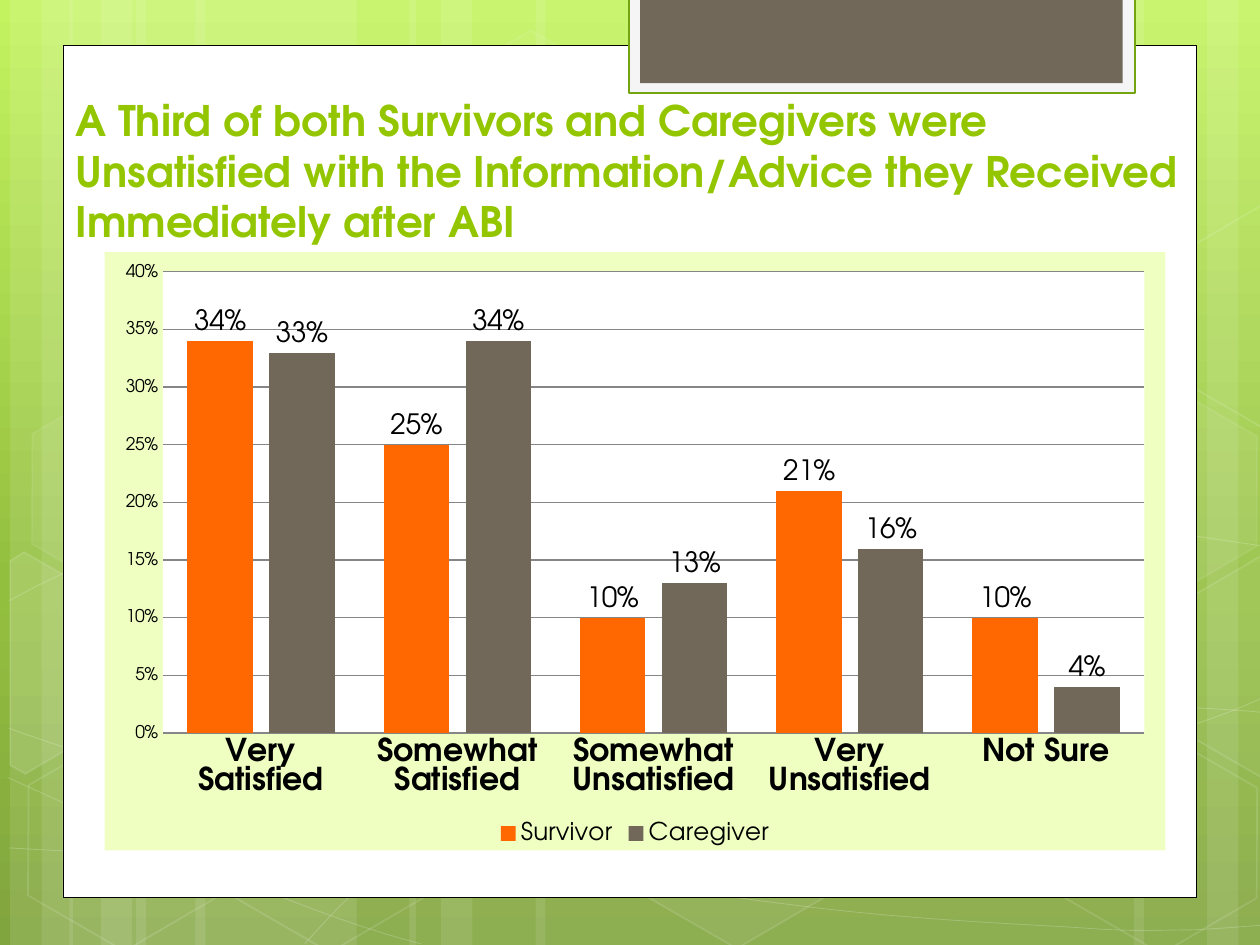
from copy import deepcopy
from math import cos, radians, sin

from lxml import etree
from pptx import Presentation
from pptx import util as u
from pptx.chart.data import CategoryChartData
from pptx.dml.color import RGBColor
from pptx.enum import chart as charts, shapes, text
from pptx.oxml import parse_xml
from pptx.oxml.ns import nsdecls, qn

FONT = "TeX Gyre Adventor"
WHITE, BLACK, GREEN, BROWN, ORANGE = "FFFFFF", "000000", "94C600", "71685A", "FF6700"
GRID = "868686"
TILT = 30


def color(value):
    return RGBColor.from_string(value)


def paint(fill, value, alpha=100):
    """Fill solidly with an opacity in percent; None means no fill."""
    if value is None:
        fill.background()
        return
    fill.solid()
    fill.fore_color.rgb = color(value)
    if alpha < 100:
        for node in fill._xPr.iter(qn("a:srgbClr")):
            etree.SubElement(node, qn("a:alpha"), val=str(alpha * 1000))


def turn(points, center, degrees):
    """Points turned clockwise about a center."""
    (cx, cy), c, s = center, cos(radians(degrees)), sin(radians(degrees))
    return [(cx + (x - cx) * c - (y - cy) * s, cy + (x - cx) * s + (y - cy) * c)
            for x, y in points]


class SlideBuilder:
    def __init__(self, slide):
        self.slide = slide

    def background(self, stops, angle):
        fill = self.slide.background.fill
        fill.gradient()
        fill.gradient_angle = angle
        stop_list = fill._fill._gradFill.find(qn("a:gsLst"))
        stop_list.append(deepcopy(stop_list[0]))
        for stop, (position, value) in zip(fill.gradient_stops, stops):
            stop.position = position
            stop.color.rgb = color(value)

    def finish(self, shape, fill, alpha, line, width, line_alpha):
        shape.shadow.inherit = False
        paint(shape.fill, fill, alpha)
        paint(shape.line.fill, line, line_alpha)
        if line:
            shape.line.width = u.Pt(width)
        return shape

    def shape(self, kind, box, fill=None, alpha=100, line=None, width=1, line_alpha=100):
        shape = self.slide.shapes.add_shape(kind, *map(u.Inches, box))
        return self.finish(shape, fill, alpha, line, width, line_alpha)

    def rectangle(self, *box, **style):
        return self.shape(shapes.MSO_SHAPE.RECTANGLE, box, **style)

    def hexagon(self, left, top, alpha, line_alpha):
        shape = self.shape(shapes.MSO_SHAPE.HEXAGON, (left, top, 1.75, 1.52),
                           WHITE if alpha else None, alpha, WHITE, 1, line_alpha)
        shape.adjustments[0] = 0.285
        shape.rotation = TILT

    def outline(self, points, closed, alpha, width, line_alpha):
        corners = [(u.Inches(x), u.Inches(y)) for x, y in points]
        builder = self.slide.shapes.build_freeform(*corners[0])
        builder.add_line_segments(corners[1:], close=closed)
        return self.finish(builder.convert_to_shape(), WHITE if alpha else None, alpha,
                           WHITE, width, line_alpha)

    def cut_hexagon(self, points, center, alpha):
        shape = self.outline(turn(points, center, -TILT), True, alpha, 1, 12)
        shape.rotation = TILT

    def curve(self, start, *segments):
        """Hairline of cubic segments (six numbers) and straight ones (two)."""
        points = [start] + [pair for s in segments for pair in zip(s[::2], s[1::2])]
        shape = self.outline(points, False, 0, 0.5, 20)
        trace = next(shape._element.iter(qn("a:path")))
        steps = iter(trace.findall(qn("a:lnTo")))
        for segment in segments:
            if len(segment) == 2:
                trace.append(next(steps))
                continue
            bezier = etree.SubElement(trace, qn("a:cubicBezTo"))
            for _ in range(3):
                step = next(steps)
                bezier.append(step[0])
                trace.remove(step)

    def title(self, words, *box):
        frame = self.slide.shapes.add_textbox(*map(u.Inches, box)).text_frame
        frame.word_wrap = True
        frame.vertical_anchor = text.MSO_ANCHOR.BOTTOM
        paragraph = frame.paragraphs[0]
        paragraph.text = words
        self.style(paragraph.font, 24, GREEN, True)

    def style(self, font, size, value=BLACK, bold=False):
        font.name, font.size, font.bold = FONT, u.Pt(size), bold
        font.color.rgb = color(value)

    def column_chart(self, categories, series, box, fill, plot_fill):
        data = CategoryChartData(number_format="0%")
        data.categories = categories
        for name, _, values in series:
            data.add_series(name, values)
        chart = self.slide.shapes.add_chart(
            charts.XL_CHART_TYPE.COLUMN_CLUSTERED, *map(u.Inches, box), data).chart
        self.style(chart.font, 10)
        chart.has_title = False
        chart.has_legend = True
        chart.legend.position = charts.XL_LEGEND_POSITION.BOTTOM
        chart.legend.include_in_layout = False
        self.style(chart.legend.font, 14)

        # Axes
        for axis in (chart.category_axis, chart.value_axis):
            axis.major_tick_mark = axis.minor_tick_mark = charts.XL_TICK_MARK.NONE
        self.style(chart.category_axis.tick_labels.font, 18, bold=True)
        values_axis = chart.value_axis
        values_axis.tick_labels.number_format = "0%"
        values_axis.tick_labels.number_format_is_linked = False
        values_axis.format.line.fill.background()
        for lines in (chart.category_axis.format.line, values_axis.major_gridlines.format.line):
            paint(lines.fill, GRID)
            lines.width = u.Pt(0.75)

        # Columns and their labels
        plot = chart.plots[0]
        plot.gap_width, plot.overlap = 75, -25
        plot.vary_by_categories = False
        for columns, (_, value, _) in zip(plot.series, series):
            paint(columns.format.fill, value)
            labels = columns.data_labels
            labels.show_value = True
            labels.number_format, labels.number_format_is_linked = "0%", False
            labels.position = charts.XL_LABEL_POSITION.OUTSIDE_END
            self.style(labels.font, 16)

        # Chart and plot area fills
        node = chart._chartSpace.find(qn("c:chart"))
        node.addnext(self.area(fill))
        node.find(qn("c:plotArea")).append(self.area(plot_fill))

    def area(self, value):
        return parse_xml(f'<c:spPr {nsdecls("c", "a")}><a:solidFill><a:srgbClr val="{value}"/>'
                         '</a:solidFill><a:ln><a:noFill/></a:ln></c:spPr>')


def main():
    presentation = Presentation()
    presentation.slide_width, presentation.slide_height = u.Inches(10), u.Inches(7.5)
    builder = SlideBuilder(presentation.slides.add_slide(presentation.slide_layouts[6]))
    builder.background([(0, "C3F35F"), (0.62, "93BF3F"), (1, "81A53E")], 270)

    # Translucent vertical bands
    for left, width in [(1.08, 1.75), (0.08, 0.5), (0.33, 0.83), (1.55, 1.75), (0.55, 0.5),
                        (0.8, 0.83), (7.33, 1.75), (9.58, 0.5), (9, 0.83), (4.25, 3.08),
                        (3.25, 0.5), (3.5, 0.83)]:
        builder.rectangle(left, 0, width, 7.5, fill=WHITE, alpha=10)

    # Sweeping hairlines
    builder.curve((0.07, 6.73), (0.61, 6.76, 1.15, 6.79, 1.9, 6.78),
                  (2.65, 6.77, 3.58, 6.75, 4.58, 6.65), (5.58, 6.55, 7, 6.36, 7.92, 6.17),
                  (8.83, 5.98, 9.77, 5.68, 10.07, 5.51))
    builder.curve((0.07, 4.77), (0.36, 4.61, 0.65, 4.46, 1.21, 4.31),
                  (1.78, 4.16, 2.59, 3.94, 3.47, 3.87), (4.36, 3.8, 5.44, 3.79, 6.54, 3.87),
                  (7.64, 3.95, 9.47, 4.26, 10.07, 4.34))
    builder.curve((0.06, 6.17), (1.27, 6.72, 2.47, 7.27, 3.34, 7.49))
    builder.curve((0.07, 5.78), (0.38, 5.89, 0.7, 6, 1.28, 6.16),
                  (1.86, 6.31, 2.73, 6.56, 3.57, 6.73), (4.4, 6.9, 5.45, 7.08, 6.28, 7.18),
                  (7.11, 7.29, 8, 7.33, 8.53, 7.36), (9.05, 7.4, 9.19, 7.38, 9.45, 7.38),
                  (9.71, 7.37, 9.89, 7.35, 10.07, 7.34))
    builder.curve((2.42, 7.49), (2.6, 7.29, 2.78, 7.09, 3.02, 6.91),
                  (3.26, 6.73, 3.6, 6.53, 3.88, 6.39), (4.16, 6.25, 4.33, 6.19, 4.7, 6.09),
                  (5.06, 5.99, 5.73, 5.85, 6.08, 5.78), (6.44, 5.71, 6.49, 5.71, 6.8, 5.69),
                  (7.11, 5.66, 7.6, 5.63, 7.94, 5.62), (8.29, 5.61, 8.86, 5.62, 8.86, 5.62),
                  (9.53, 5.62), (9.71, 5.63, 9.88, 5.64, 9.97, 5.65),
                  (10.06, 5.66, 10.03, 5.65, 10.06, 5.66))

    # Hexagons, whole and cut at the slide edges
    left_cut = [(0.08, 4.45), (0.19, 4.38), (0.96, 4.82), (0.95, 5.7), (0.2, 6.14), (0.08, 6.07)]
    right_cut = [(9.26, 4.85), (10.01, 4.41), (10.09, 4.46), (10.09, 6.13), (10.02, 6.17), (9.26, 5.73)]
    upper_cut = [(x, y - 2.78) for x, y in right_cut]
    builder.hexagon(3.34, 0.36, 4, 8)
    builder.hexagon(4.97, 5.89, 6, 12)
    builder.cut_hexagon(left_cut, (0.36, 5.35), 10)
    for hexagon in [(0.11, 5.91, 0, 12), (0.14, 3.12, 7, 8), (1.74, 5.92, 0, 12),
                    (7.53, 4.53, 10, 12), (8.34, 5.93, 0, 12), (8.34, 3.14, 7, 8)]:
        builder.hexagon(*hexagon)
    builder.cut_hexagon(right_cut, (9.85, 5.2), 4)
    builder.cut_hexagon(upper_cut, (9.85, 2.42), 0)

    # White panel and tab
    builder.rectangle(0.5, 0.36, 9, 6.76, fill=WHITE, line=BLACK, width=0.5)
    builder.rectangle(4.99, -0.02, 4.02, 0.76, fill="F5F5F5", line="74A510", width=1.25)
    builder.rectangle(5.08, -0.02, 3.83, 0.68, fill=BROWN)

    # Title and chart
    builder.title("A Third of both Survivors and Caregivers were Unsatisfied with the "
                  "Information/Advice they Received Immediately after ABI", 0.5, 0.75, 9, 1.25)
    builder.column_chart(
        ["Very Satisfied", "Somewhat Satisfied", "Somewhat Unsatisfied", "Very Unsatisfied", "Not Sure"],
        [("Survivor", ORANGE, [0.34, 0.25, 0.1, 0.21, 0.1]),
         ("Caregiver", BROWN, [0.33, 0.34, 0.13, 0.16, 0.04])],
        (0.83, 2, 8.42, 4.75), "EFFFC1", WHITE)

    presentation.save("out.pptx")


if __name__ == "__main__":
    main()
